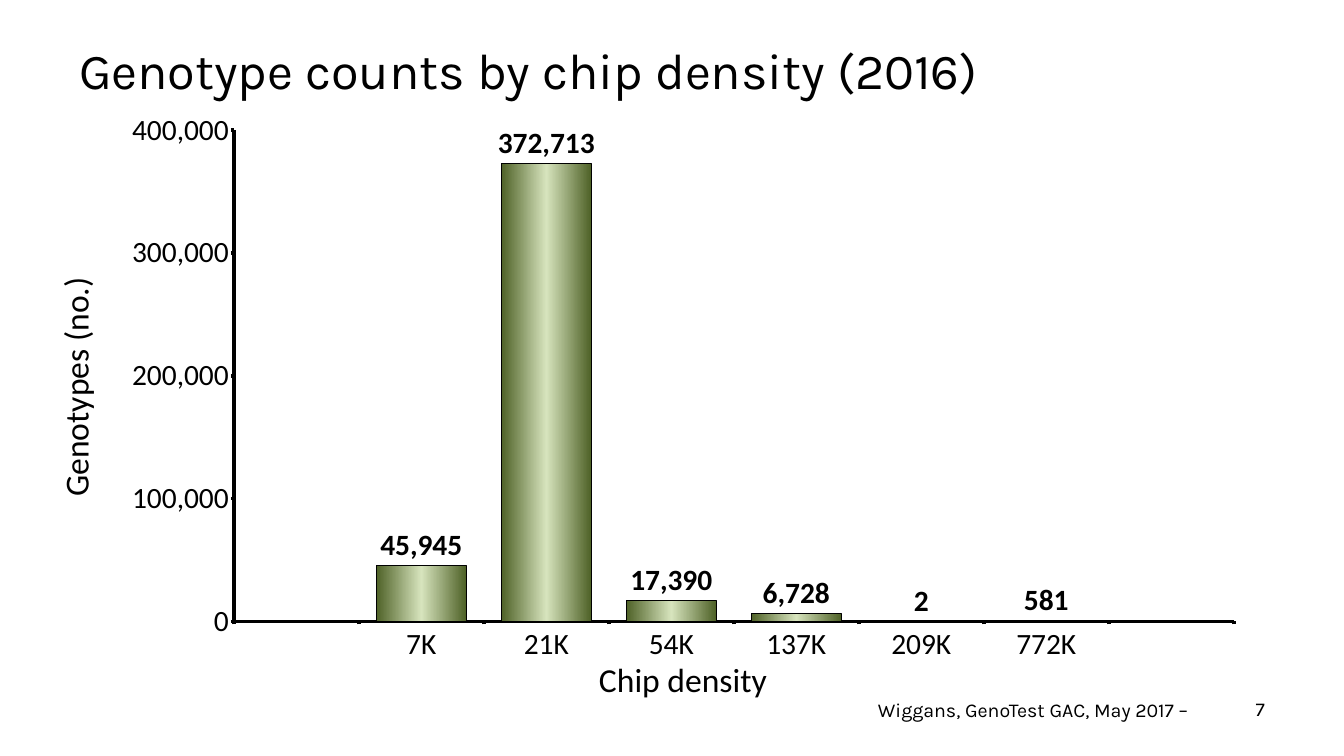
from copy import deepcopy
from dataclasses import dataclass

from lxml import etree
from pptx import Presentation
from pptx.chart.axis import _BaseAxis
from pptx.chart.chart import Chart
from pptx.chart.data import CategoryChartData
from pptx.dml.color import RGBColor
from pptx.enum import chart as ch, text as tx
from pptx.oxml import ns
from pptx.text.text import Font, TextFrame
from pptx.util import Inches, Pt

BLACK = "000000"
BAR_STOPS = [(0, "4F6228"), (0.5, "D7E4BD"), (1, "4F6228")]
COUNTS = {
    "7K": 45945,
    "21K": 372713,
    "54K": 17390,
    "137K": 6728,
    "209K": 2,
    "772K": 581,
}
PLOT_AREA = {"x": 0.154, "y": 0.029, "w": 0.815, "h": 0.821}


@dataclass
class Note:
    words: str
    left: float
    top: float
    width: float
    height: float
    align: tx.PP_ALIGN
    anchor: tx.MSO_ANCHOR
    inset_x: float
    inset_y: float


NOTES = [
    Note("Wiggans, GenoTest GAC, May 2017 –", 17.31, 13.79, 7.35, 0.57,
         tx.PP_ALIGN.LEFT, tx.MSO_ANCHOR.TOP, 0.1, 0.05),
    Note("7", 18.41, 13.66, 6.91, 0.8,
         tx.PP_ALIGN.RIGHT, tx.MSO_ANCHOR.MIDDLE, 0.24, 0.12),
]


def color(value: str) -> RGBColor:
    return RGBColor.from_string(value)


def style_font(font: Font, name: str, size: float, bold: bool = False) -> None:
    font.name = name
    font.size = Pt(size)
    font.bold = bold
    font.color.rgb = color(BLACK)


def set_insets(frame: TextFrame, x: float, y: float) -> None:
    frame.margin_left = frame.margin_right = Inches(x)
    frame.margin_top = frame.margin_bottom = Inches(y)


def add_note(slide, note: Note) -> None:
    box = slide.shapes.add_textbox(Inches(note.left), Inches(note.top),
                                   Inches(note.width), Inches(note.height))
    frame = box.text_frame
    frame.word_wrap = True
    frame.vertical_anchor = note.anchor
    set_insets(frame, note.inset_x, note.inset_y)
    frame.text = note.words
    frame.paragraphs[0].alignment = note.align
    style_font(frame.paragraphs[0].runs[0].font, "Karla", 28)


def style_axis(axis: _BaseAxis, heading: str) -> None:
    axis.has_major_gridlines = False
    axis.major_tick_mark = ch.XL_TICK_MARK.OUTSIDE
    axis.minor_tick_mark = ch.XL_TICK_MARK.NONE
    axis.format.line.color.rgb = color(BLACK)
    axis.format.line.width = Pt(5)
    style_font(axis.tick_labels.font, "Calibri", 42)
    frame = axis.axis_title.text_frame
    frame.text = heading
    style_font(frame.paragraphs[0].runs[0].font, "Calibri", 48)


def set_plot_area(chart: Chart) -> None:
    area = chart._chartSpace.chart.plotArea
    for old in area.findall(ns.qn("c:layout")):
        area.remove(old)
    layout = etree.Element(ns.qn("c:layout"))
    manual = etree.SubElement(layout, ns.qn("c:manualLayout"))
    settings = {"layoutTarget": "inner", "xMode": "edge", "yMode": "edge", **PLOT_AREA}
    for tag, value in settings.items():
        etree.SubElement(manual, ns.qn(f"c:{tag}")).set("val", str(value))
    area.insert(0, layout)


def fill_bars(chart: Chart) -> None:
    bars = chart.plots[0].series[0]
    bars.invert_if_negative = False
    fill = bars.format.fill
    fill.gradient()
    fill.gradient_angle = 0
    stop_list = next(chart._chartSpace.iter(ns.qn("a:gsLst")))
    stop_list.append(deepcopy(stop_list[0]))
    for stop, (position, shade) in zip(fill.gradient_stops, BAR_STOPS):
        stop.position = position
        stop.color.rgb = color(shade)
    bars.format.line.color.rgb = color(BLACK)
    bars.format.line.width = Pt(0.75)


def add_counts_chart(slide) -> None:
    counts = CategoryChartData(number_format="#,##0")
    counts.categories = ["", *COUNTS, ""]
    counts.add_series("Series 1", [None, *COUNTS.values(), None])
    chart = slide.shapes.add_chart(
        ch.XL_CHART_TYPE.COLUMN_CLUSTERED, Inches(0.89), Inches(2.23),
        Inches(24.33), Inches(11.88), counts).chart
    chart.has_legend = False
    chart.has_title = False
    style_font(chart.font, "Calibri", 42, True)
    set_plot_area(chart)

    style_axis(chart.category_axis, "Chip density")
    genotypes = chart.value_axis
    style_axis(genotypes, "Genotypes (no.)")
    genotypes.minimum_scale = 0
    genotypes.maximum_scale = 400000
    genotypes.major_unit = 100000
    genotypes.tick_labels.number_format = "#,##0"
    genotypes.tick_labels.number_format_is_linked = False

    plot = chart.plots[0]
    plot.gap_width = 40
    plot.vary_by_categories = False
    fill_bars(chart)
    labels = plot.series[0].data_labels
    labels.show_value = True
    labels.position = ch.XL_LABEL_POSITION.OUTSIDE_END
    labels.number_format = "#,##0"
    labels.number_format_is_linked = False
    style_font(labels.font, "Calibri", 42, True)


def add_title(slide, words: str) -> None:
    title = slide.shapes.title
    title.left, title.top = Inches(1.33), Inches(0.25)
    title.width, title.height = Inches(23.98), Inches(2.25)
    frame = title.text_frame
    frame.vertical_anchor = tx.MSO_ANCHOR.MIDDLE
    frame.auto_size = tx.MSO_AUTO_SIZE.NONE
    set_insets(frame, 0.24, 0.12)
    frame.text = words
    frame.paragraphs[0].alignment = tx.PP_ALIGN.LEFT
    style_font(frame.paragraphs[0].runs[0].font, "Karla", 72)


def main() -> None:
    deck = Presentation()
    deck.slide_width, deck.slide_height = Inches(26.65), Inches(15)
    slide = deck.slides.add_slide(deck.slide_layouts.get_by_name("Title Only"))
    add_title(slide, "Genotype counts by chip density (2016)")
    for note in NOTES:
        add_note(slide, note)
    add_counts_chart(slide)
    deck.save("out.pptx")


if __name__ == "__main__":
    main()
